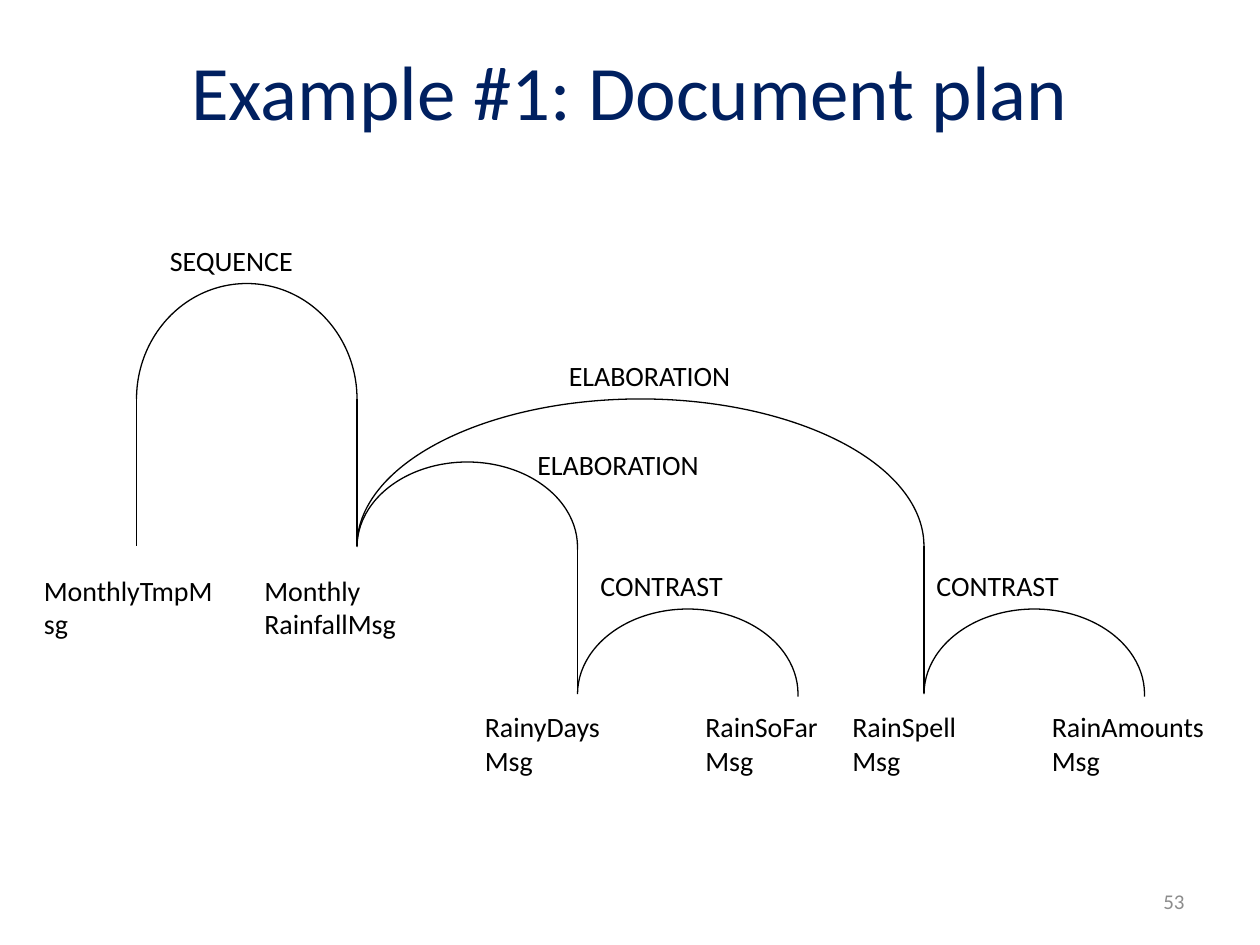
from lxml import etree
from pptx import Presentation
from pptx.dml.color import RGBColor
from pptx.enum.shapes import MSO_CONNECTOR as CONN, MSO_SHAPE as SHAPE
from pptx.enum.text import MSO_ANCHOR as ANCHOR, PP_ALIGN as ALIGN
from pptx.oxml.ns import qn
from pptx.util import Inches, Pt

COLORS = {"title": "002060", "ink": "000000", "number": "8C8C8C"}
CELL = Inches(1) // 12  # the slide is a grid of 120 columns by 90 rows
DEGREE = 0.6  # one degree in the units of an arc's adjustments

prs = Presentation()
prs.slide_width, prs.slide_height = 120 * CELL, 90 * CELL
s = prs.slides.add_slide(prs.slide_layouts[6])


def add_text(text, col, row, cols, rows, size=16, color="ink",
             align=ALIGN.LEFT, anchor=ANCHOR.TOP):
    sp = s.shapes.add_textbox(*(int(v * CELL) for v in (col, row, cols, rows)))
    tf = sp.text_frame
    tf.word_wrap = True
    tf.vertical_anchor = anchor
    tf.text = text
    p = tf.paragraphs[0]
    p.alignment = align
    for r in p.runs:
        r.font.name = "Calibri"
        r.font.size = Pt(size)
        r.font.color.rgb = RGBColor.from_string(COLORS[color])


def draw_outline(sp):
    sp.line.color.rgb = RGBColor.from_string(COLORS["ink"])
    sp.line.width = Pt(0.75)


add_text("Example #1: Document plan", 6, 1, 108, 15, 44, "title",
         ALIGN.CENTER, ANCHOR.MIDDLE)
add_text("53", 86, 83.4, 28, 4.8, 12, "number", ALIGN.RIGHT, ANCHOR.MIDDLE)

# Relations: left column, right column, top row, rise in rows
for left, right, top, rise in [
    (13, 34, 27, 11),
    (34, 88, 38, 14),
    (34, 55, 44, 8.1),
    (55, 76, 58, 8.1),
    (88, 109, 58, 8.1),
]:
    sp = s.shapes.add_shape(SHAPE.ARC, left * CELL, top * CELL,
                            (right - left) * CELL, int(2 * rise * CELL))
    sp.adjustments[0] = 180 * DEGREE
    sp.adjustments[1] = 1.4 * DEGREE
    sp.fill.background()
    sp.shadow.inherit = False
    draw_outline(sp)

# Stems: column, top row, bottom row
for col, top, bottom in [(13, 38, 52), (34, 38, 52), (55, 52, 66), (88, 52, 66)]:
    sp = s.shapes.add_connector(CONN.STRAIGHT, col * CELL, top * CELL,
                                col * CELL, bottom * CELL)
    draw_outline(sp)
    etree.SubElement(sp._element.spPr, qn("a:effectLst"))

# Relation names: text, column, row, width in columns
for text, col, row, cols in [
    ("SEQUENCE", 15, 22.56, 19),
    ("ELABORATION", 53, 33.6, 24),
    ("ELABORATION", 50, 42, 23),
    ("CONTRAST", 56, 53.6, 21),
    ("CONTRAST", 88, 53.6, 21),
]:
    add_text(text, col, row, cols, 4.4)

# Messages at the leaves: text, column, row
for text, col, row in [
    ("MonthlyTmpMsg", 3, 54),
    ("Monthly\vRainfallMsg", 24, 54),
    ("RainyDays\vMsg", 45, 67),
    ("RainSoFar\vMsg", 66, 67),
    ("RainSpell\vMsg", 80, 67),
    ("RainAmounts\vMsg", 99, 67),
]:
    add_text(text, col, row, 19, 7.7)

prs.save("out.pptx")
